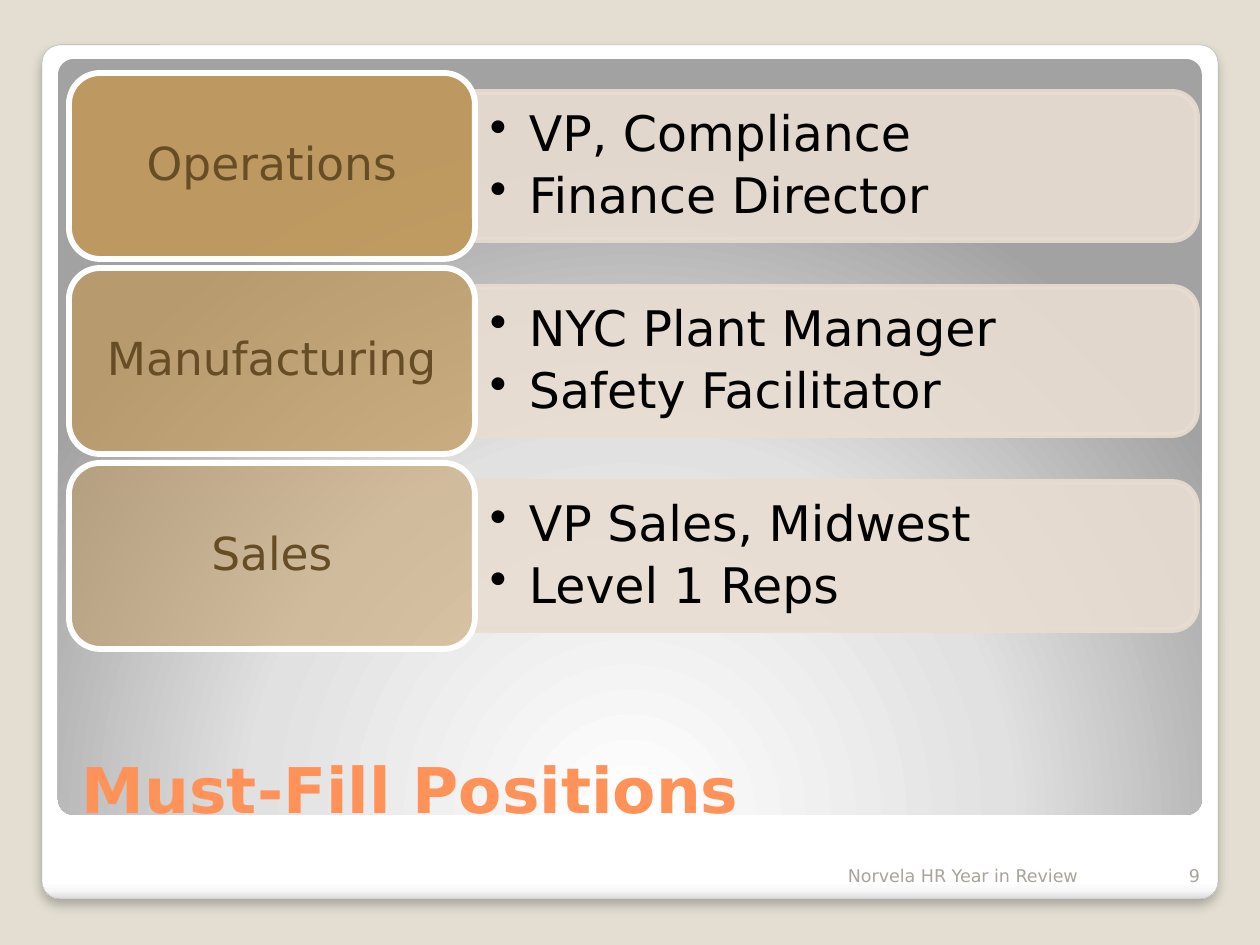
from dataclasses import dataclass
from lxml.etree import SubElement
from pptx import Presentation
from pptx.dml.color import RGBColor as Rgb
from pptx.enum.shapes import MSO_SHAPE as Geo
from pptx.enum.text import MSO_ANCHOR as Anchor, PP_ALIGN as Align
from pptx.oxml.ns import qn
from pptx.util import Pt

SCALE = 914400 / 126


@dataclass(frozen=True)
class Theme:
    """Colours, type sizes and font of the slide."""
    font: str = "DejaVu Sans"
    back: str = "E3DED1"
    edge: str = "A4A4A4"
    white: str = "FFFFFF"
    tan: str = "C19859"
    sand: str = "E9DDD1"
    brown: str = "674D26"
    black: str = "000000"
    title: str = "FF9258"
    foot: str = "A8A49B"
    big: int = 36
    item: int = 28
    label: int = 26
    small: int = 10
    rim: float = 3.35


THEME = Theme()


def px(num):
    """Turn px into EMU."""
    return round(num * SCALE)


def add(node, tag, **attrs):
    """Append an XML child and return it."""
    return SubElement(node, qn(tag), {key: str(val) for key, val in attrs.items()})


def fade(color, part):
    """Give a solid colour an opacity in percent."""
    add(color._xFill.find(qn("a:srgbClr")), "a:alpha", val=part * 1000)


def block(slide, geo, box, fill, line=None, width=0, alpha=100):
    """Place a filled preset shape."""
    shape = slide.shapes.add_shape(geo, *map(px, box))
    shape.shadow.inherit = False
    shape.fill.solid()
    shape.fill.fore_color.rgb = Rgb.from_string(fill)
    if alpha < 100:
        add(shape.fill._xPr.find(qn("a:solidFill"))[0], "a:alpha", val=alpha * 1000)
    if line:
        shape.line.color.rgb = Rgb.from_string(line)
        shape.line.width = Pt(width)
    else:
        shape.line.fill.background()
    return shape


def blend(shape, stops):
    """Swap the solid fill for gradient stops and return the gradient."""
    props = shape._element.spPr
    solid = props.find(qn("a:solidFill"))
    grad = add(props, "a:gradFill", rotWithShape=1)
    props.replace(solid, grad)
    group = add(grad, "a:gsLst")
    for pos, tone in stops:
        add(add(group, "a:gs", pos=pos * 1000), "a:srgbClr", val=tone)
    return grad


def text(slide, box, lines, size, tone, anchor=Anchor.MIDDLE, align=Align.LEFT,
         inset=(13, 6), bold=False, lead=None, after=None):
    """Place a text box and return its paragraphs."""
    frame = slide.shapes.add_textbox(*map(px, box)).text_frame
    frame.word_wrap = True
    frame.vertical_anchor = anchor
    frame.margin_left = frame.margin_right = px(inset[0])
    frame.margin_top = frame.margin_bottom = px(inset[1])
    frame.text = "\n".join(lines)
    for para in frame.paragraphs:
        para.alignment = align
        para.line_spacing = lead
        para.space_after = after
        font = para.font
        font.name, font.size, font.bold = THEME.font, Pt(size), bold
        font.color.rgb = Rgb.from_string(tone)
    return frame.paragraphs


def frame(slide, box):
    """Draw the white card and the grey panel within it."""
    left, top, wide, high = box
    card = block(slide, Geo.ROUNDED_RECTANGLE, box, THEME.white, THEME.edge, 0.16)
    grad = blend(card, [(0, "FFFFFF"), (98, "FFFFFF"), (99, "F7F7F7"), (100, "DADADA")])
    add(grad, "a:lin", ang=5400000, scaled=0)
    effect = card._element.spPr.find(qn("a:effectLst"))
    shade = add(effect, "a:outerShdw", blurRad=Pt(6), dist=Pt(4), dir=5400000,
                algn="t", rotWithShape=0)
    add(add(shade, "a:srgbClr", val=THEME.black), "a:alpha", val=25000)
    panel = block(slide, Geo.ROUNDED_RECTANGLE,
                  (left + 16, top + 14, wide - 32, high - 98), THEME.white)
    grad = blend(panel, [(0, "FFFFFF"), (55, "E1E1E1"), (100, "A2A2A2")])
    add(add(grad, "a:path", path="circle"), "a:fillToRect",
        l=50000, t=175000, r=50000, b=-75000)
    for shape in (card, panel):
        shape.adjustments[0] = 0.021


def row(slide, box, name, jobs, alpha):
    """Draw a department label with its bar of open jobs."""
    left, top, wide, high = box
    split, tall = 406, 148
    span = wide - split
    mid_x, mid_y = left + split + span / 2, top + high / 2
    bar = block(slide, Geo.ROUND_2_SAME_RECTANGLE,
                (mid_x - tall / 2, mid_y - span / 2, tall, span),
                THEME.sand, THEME.sand, THEME.rim, 90)
    bar.rotation = 90
    fade(bar.line.color, 90)
    paras = text(slide, (left + split, top + 26, span - 8, 135), jobs, THEME.item,
                 THEME.black, inset=(15, 8), lead=0.9, after=Pt(5))
    for para in paras:
        para.level = 1
        props = para._p.get_or_add_pPr()
        props.set("marL", str(px(39)))
        props.set("indent", str(px(-39)))
        mark = add(props, "a:buChar", char="•")
        props.find(qn("a:defRPr")).addprevious(mark)
    block(slide, Geo.ROUNDED_RECTANGLE, (left, top, split, high),
          THEME.tan, THEME.white, THEME.rim, alpha)
    text(slide, (left + 9, top + 9, split - 18, high - 18), [name], THEME.label,
         THEME.brown, align=Align.CENTER, inset=(14, 6), lead=0.9, after=Pt(11))


def foot(slide, box):
    """Place the footer and the slide number."""
    left, top, wide, high = box
    num = 63
    text(slide, (left, top, wide - num, high), ["Norvela HR Year in Review"],
         THEME.small, THEME.foot, Anchor.BOTTOM)
    text(slide, (left + wide - num, top, num, high), ["9"],
         THEME.small, THEME.foot, Anchor.BOTTOM, Align.RIGHT)


def main():
    """Build and save the slide."""
    deck = Presentation()
    deck.slide_width, deck.slide_height = px(1260), px(945)
    slide = deck.slides.add_slide(deck.slide_layouts[6])
    back = slide.background.fill
    back.solid()
    back.fore_color.rgb = Rgb.from_string(THEME.back)
    frame(slide, (42, 45, 1176, 854))
    text(slide, (69, 687, 1128, 145), ["Must-Fill Positions"], THEME.big,
         THEME.title, Anchor.BOTTOM, bold=True)
    teams = [
        ("Operations", ["VP, Compliance", "Finance Director"]),
        ("Manufacturing", ["NYC Plant Manager", "Safety Facilitator"]),
        ("Sales", ["VP Sales, Midwest", "Level 1 Reps"]),
    ]
    for pos, (name, jobs) in enumerate(teams):
        row(slide, (69, 73 + 195 * pos, 1128, 186), name, jobs, 90 - 20 * pos)
    foot(slide, (835, 842, 378, 50))
    deck.save("out.pptx")


if __name__ == "__main__":
    main()
